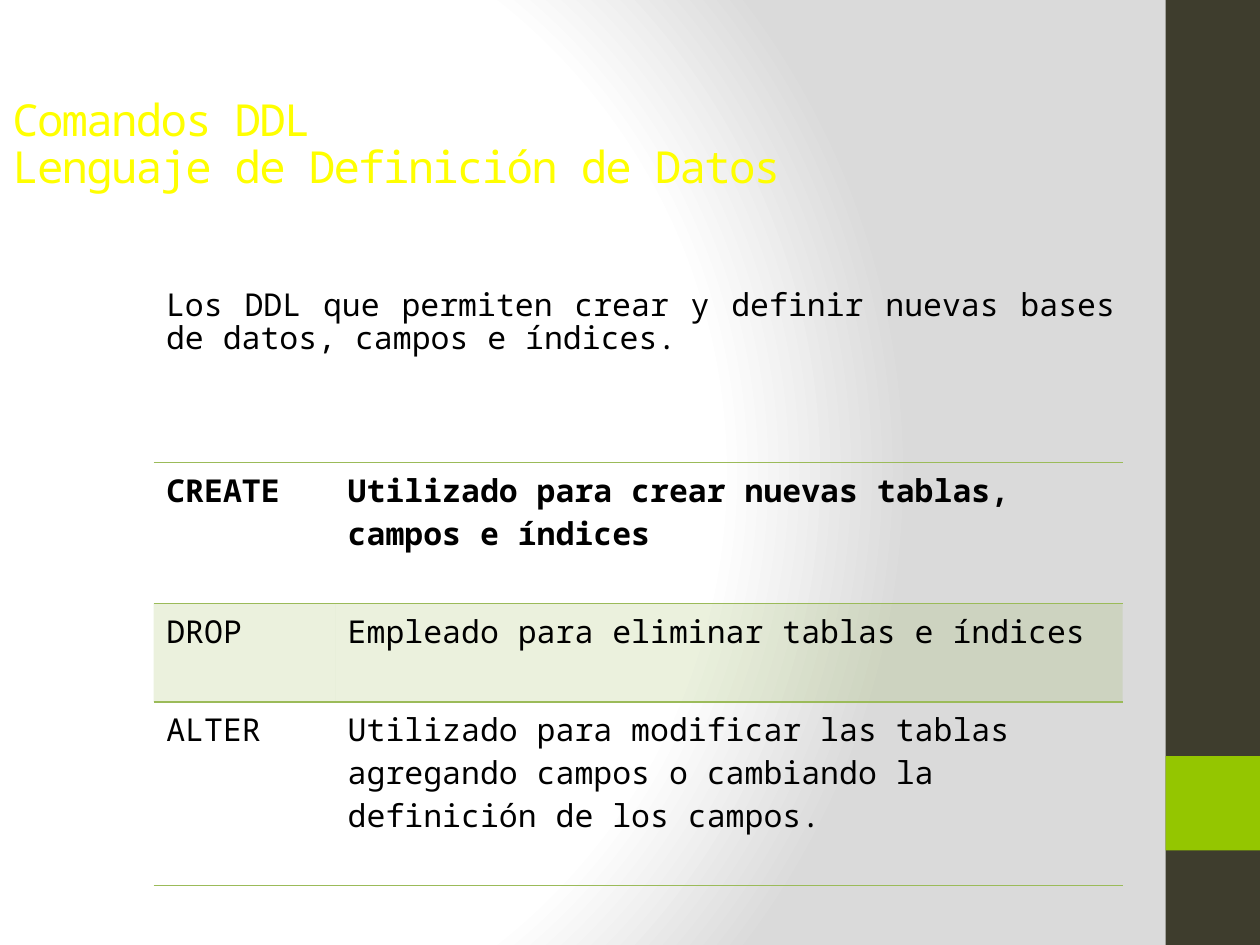
from lxml import etree
from pptx import Presentation
from pptx.dml.color import RGBColor
from pptx.enum.shapes import MSO_SHAPE
from pptx.enum.text import MSO_ANCHOR, PP_ALIGN
from pptx.oxml import parse_xml
from pptx.oxml.ns import qn
from pptx.util import Inches, Pt

RECTANGLE = MSO_SHAPE.RECTANGLE
TOP, JUSTIFY = MSO_ANCHOR.TOP, PP_ALIGN.JUSTIFY

BLACK = RGBColor(0x00, 0x00, 0x00)
YELLOW = RGBColor(0xFF, 0xFF, 0x00)
OLIVE = RGBColor(0x3E, 0x3D, 0x2D)
LIME = RGBColor(0x94, 0xC6, 0x00)
SAGE = RGBColor(0x9B, 0xBB, 0x59)
WHITE = RGBColor(0xFF, 0xFF, 0xFF)
GRAY = RGBColor(0xDA, 0xDA, 0xDA)

FONT = "Noto Sans Mono"
LINE_SPACING = 0.88
SLIDE_W, SLIDE_H = 10, 7.5
NO_GRID_STYLE = "{2D5ABB26-0587-4C30-8999-92F81FD0307C}"

TITLE = ["Comandos DDL", "Lenguaje de Definición de Datos"]
INTRO = ("Los DDL que permiten crear y definir nuevas bases de datos, "
         "campos e índices.")
COMMANDS = [
    ("CREATE", "Utilizado para crear nuevas tablas, campos e índices"),
    ("DROP", "Empleado para eliminar tablas e índices"),
    ("ALTER", "Utilizado para modificar las tablas agregando campos o "
              "cambiando la definición de los campos."),
]


def set_font(paragraph, size, color, bold=False):
    font = paragraph.font
    font.name, font.size, font.bold = FONT, Pt(size), bold
    font.color.rgb = color


def paint_background(slide):
    """Circular gradient, white in the centre and gray at the rim."""
    slide.background.fill.solid()
    properties = slide.background._cSld.bg.bgPr
    stops = "".join(
        f'<a:gs pos="{share * 1000}"><a:srgbClr val="{color}"/></a:gs>'
        for share, color in ((0, WHITE), (75, WHITE), (100, GRAY)))
    gradient = parse_xml(
        '<a:gradFill xmlns:a="http://schemas.openxmlformats.org/drawingml/2006/main"'
        f' rotWithShape="1"><a:gsLst>{stops}</a:gsLst><a:path path="circle">'
        '<a:fillToRect l="20000" t="50000" r="100000" b="50000"/>'
        '</a:path></a:gradFill>')
    properties.replace(properties.find(qn("a:solidFill")), gradient)


def add_sidebar(slide, left, top, width, height):
    """Dark band with a square accent at four fifths of its height."""
    for y, h, color in ((top, height, OLIVE),
                        (top + 0.8 * height, 0.1 * height, LIME)):
        band = slide.shapes.add_shape(
            RECTANGLE, Inches(left), Inches(y), Inches(width), Inches(h))
        band.shadow.inherit = False
        band.fill.solid()
        band.fill.fore_color.rgb = color
        band.line.fill.background()


def add_text(slide, box, lines, size, color, inset_top=0.05, align=None, tracking=0):
    frame = slide.shapes.add_textbox(*map(Inches, box)).text_frame
    frame.word_wrap = True
    frame.vertical_anchor = TOP
    frame.margin_top = Inches(inset_top)
    frame.text = "\n".join(lines)
    for paragraph in frame.paragraphs:
        paragraph.alignment = align
        paragraph.line_spacing = LINE_SPACING
        set_font(paragraph, size, color)
        if tracking:
            for run in paragraph.runs:
                run.font._element.set("spc", str(tracking * 100))


def add_border(cell, side):
    border = etree.SubElement(cell._tc.get_or_add_tcPr(), qn(f"a:ln{side}"),
                              w=str(Pt(1)))
    fill = etree.SubElement(border, qn("a:solidFill"))
    etree.SubElement(fill, qn("a:srgbClr"), val=str(SAGE))


def fill_cell(cell, shaded):
    if not shaded:
        cell.fill.background()
        return
    cell.fill.solid()
    cell.fill.fore_color.rgb = SAGE
    color = cell._tc.tcPr.find(f".//{qn('a:solidFill')}[last()]/{qn('a:srgbClr')}")
    for color in cell._tc.tcPr.findall(f"{qn('a:solidFill')}/{qn('a:srgbClr')}"):
        etree.SubElement(color, qn("a:alpha"), val="20000")


def add_commands(slide, left, top, widths, heights):
    """Ruled table with a bold first row and a shaded second row."""
    box = map(Inches, (left, top, sum(widths), sum(heights)))
    table = slide.shapes.add_table(len(heights), len(widths), *box).table
    table.first_row = table.horz_banding = False
    table._tbl.tblPr.find(qn("a:tableStyleId")).text = NO_GRID_STYLE
    for column, width in zip(table.columns, widths):
        column.width = Inches(width)
    for r, (height, entries) in enumerate(zip(heights, COMMANDS)):
        table.rows[r].height = Inches(height)
        sides = ("T", "T", "B")[r]
        for c, entry in enumerate(entries):
            cell = table.cell(r, c)
            cell.text = entry
            set_font(cell.text_frame.paragraphs[0], 18, BLACK, bold=r == 0)
            add_border(cell, sides)
            fill_cell(cell, shaded=r == 1)


def main():
    presentation = Presentation()
    presentation.slide_width = Inches(SLIDE_W)
    presentation.slide_height = Inches(SLIDE_H)
    slide = presentation.slides.add_slide(presentation.slide_layouts[6])

    paint_background(slide)
    add_sidebar(slide, 0.925 * SLIDE_W, 0, 0.075 * SLIDE_W, SLIDE_H)
    add_text(slide, (0, 0.3, 9, 1.02), TITLE, 25.2, YELLOW,
             inset_top=0.49, tracking=-1)
    add_commands(slide, 1.22, 3.67, (1.44, 6.25), (1.12, 0.78, 1.46))
    add_text(slide, (1.22, 2.25, 7.73, 0.7), [INTRO], 18, BLACK, align=JUSTIFY)

    presentation.save("out.pptx")


if __name__ == "__main__":
    main()
